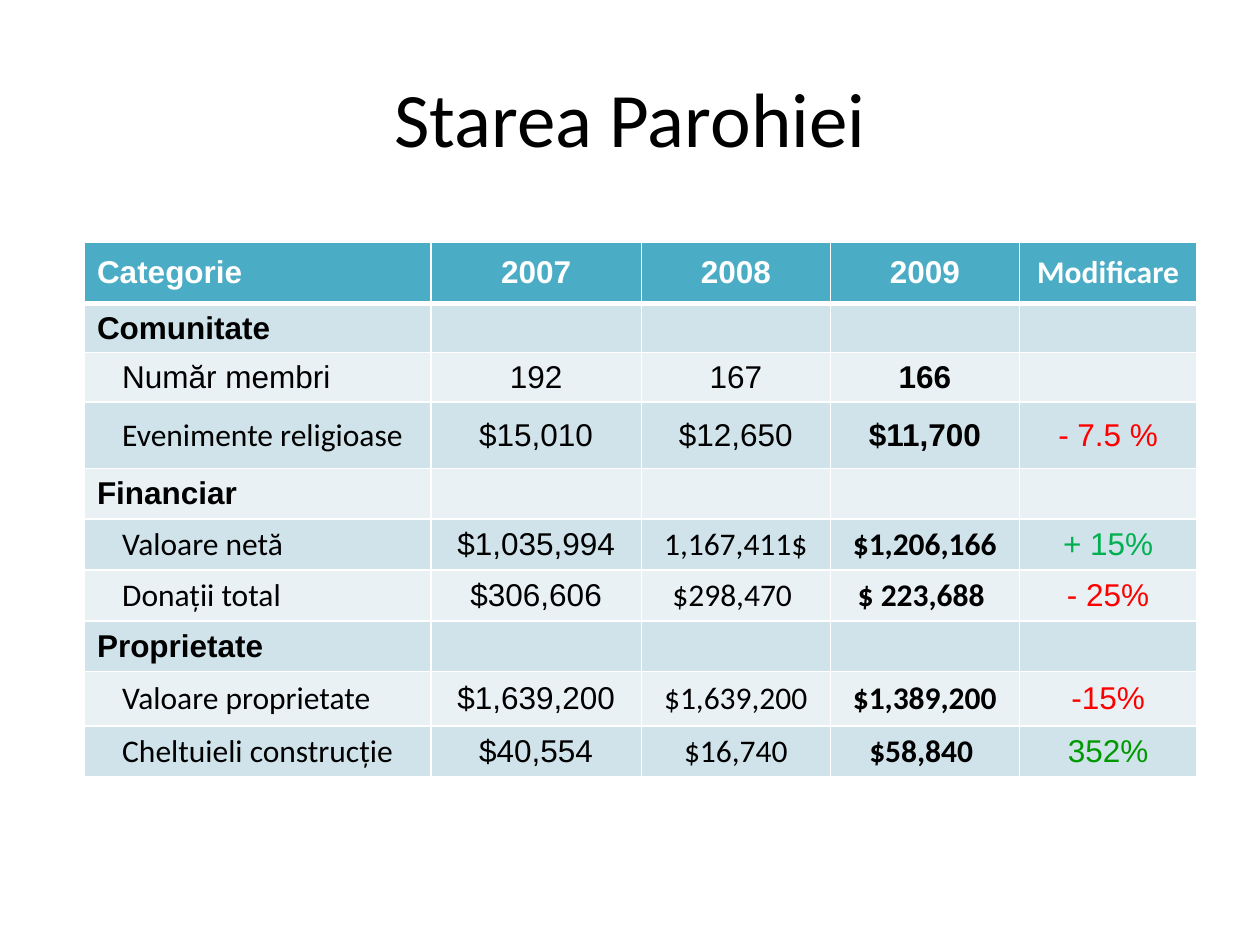
import dataclasses

import pptx
import pptx.dml.color
import pptx.enum.text
import pptx.oxml.ns
import pptx.util
from lxml import etree

Inches = pptx.util.Inches
Pt = pptx.util.Pt
ALIGN = pptx.enum.text.PP_ALIGN
MIDDLE = pptx.enum.text.MSO_ANCHOR.MIDDLE
qn = pptx.oxml.ns.qn


@dataclasses.dataclass(frozen=True)
class Theme:
    title_size: int = 44
    table_size: int = 18
    table_font: str = "Arial"
    text_font: str = "Calibri"
    ink: str = "000000"
    white: str = "FFFFFF"
    header: str = "4BACC6"
    bands: tuple = ("E9F1F5", "D0E3EA")
    loss: str = "FF0000"
    gain: str = "00B050"
    strong_gain: str = "009900"


THEME = Theme()
WIDTH, HEIGHT = 10, 7.5
COLUMNS = (2.75, 1.67, 1.5, 1.5, 1.41)
ROW_HEIGHTS = (0.49, 0.39, 0.39, 0.53, 0.4, 0.4, 0.4, 0.4, 0.43, 0.4)
ROWS = (
    ("Categorie", "2007", "2008", "2009", "Modificare"),
    ("Comunitate",),
    ("Număr membri", "192", "167", "166", ""),
    ("Evenimente religioase", "$15,010", "$12,650", "$11,700", "- 7.5 %"),
    ("Financiar",),
    ("Valoare netă", "$1,035,994", "1,167,411$", "$1,206,166", "+ 15%"),
    ("Donații total", "$306,606", "$298,470 ", "$ 223,688 ", "- 25%"),
    ("Proprietate",),
    ("Valoare proprietate", "$1,639,200", "$1,639,200", "$1,389,200", "-15%"),
    ("Cheltuieli construcție", "$40,554", "$16,740", "$58,840 ", "352%"),
)
CHANGE_COLOURS = {3: THEME.loss, 5: THEME.gain, 6: THEME.loss,
                  8: THEME.loss, 9: THEME.strong_gain}
CALIBRI_CELLS = ({(0, 4), (3, 0)}
                 | {(row, column) for row in (5, 6, 8, 9) for column in (0, 2, 3)})
TIGHT_CELLS = {(row, column) for row in (5, 6) for column in (2, 3)}


def rgb(value):
    return pptx.dml.color.RGBColor.from_string(value)


def add_span(para, text, font, size, colour, bold=False):
    span = para.add_run()
    span.text = text
    span.font.name = font
    span.font.size = Pt(size)
    span.font.bold = bold
    span.font.color.rgb = rgb(colour)


def add_title(page, text):
    box = page.shapes.title
    box.left, box.top = Inches(0.05 * WIDTH), Inches(0.04 * HEIGHT)
    box.width, box.height = Inches(0.9 * WIDTH), Inches(HEIGHT / 6)
    box.text_frame.vertical_anchor = MIDDLE
    para = box.text_frame.paragraphs[0]
    para.alignment = ALIGN.CENTER
    add_span(para, text, THEME.text_font, THEME.title_size, THEME.ink)


def set_borders(cell, widths):
    """Draw white borders; widths maps the sides L, R, T, B to points."""
    properties = cell._tc.get_or_add_tcPr()
    for position, (side, width) in enumerate(widths.items()):
        line = etree.Element(qn(f"a:ln{side}"), w=str(Pt(width)))
        fill = etree.SubElement(line, qn("a:solidFill"))
        etree.SubElement(fill, qn("a:srgbClr"), val=THEME.white)
        properties.insert(position, line)


def set_empty_font(para):
    """Size an empty cell's line, so that it does not stretch the row."""
    mark = etree.SubElement(para._p, qn("a:endParaRPr"), sz=str(THEME.table_size * 100))
    etree.SubElement(mark, qn("a:latin"), typeface=THEME.table_font)


def cell_colour(row, column):
    if row == 0:
        return THEME.white
    return CHANGE_COLOURS.get(row, THEME.ink) if column == 4 else THEME.ink


def fill_cell(cell, row, column, text, is_section):
    cell.fill.solid()
    cell.fill.fore_color.rgb = rgb(THEME.bands[row % 2] if row else THEME.header)
    cell.vertical_anchor = MIDDLE
    set_borders(cell, {"L": 1, "R": 1, "T": 3 if row == 1 else 1, "B": 1 if row else 3})
    if (row, column) in TIGHT_CELLS:
        cell.margin_left = cell.margin_right = cell.margin_top = cell.margin_bottom = 0
    para = cell.text_frame.paragraphs[0]
    if not text:
        set_empty_font(para)
        return
    if column:
        para.alignment = ALIGN.CENTER
    elif row and not is_section:
        para.level = 1
        properties = para._p.get_or_add_pPr()
        properties.set("marL", str(Inches(0.2)))
        properties.set("indent", "0")
    font = THEME.text_font if (row, column) in CALIBRI_CELLS else THEME.table_font
    bold = row == 0 or is_section or column == 3
    add_span(para, text, font, THEME.table_size, cell_colour(row, column), bold)


def add_status_table(page):
    frame = page.shapes.add_table(
        len(ROWS), len(COLUMNS), Inches(0.67), Inches(1.92),
        Inches(sum(COLUMNS)), Inches(sum(ROW_HEIGHTS)))
    table = frame.table
    for column, width in zip(table.columns, COLUMNS):
        column.width = Inches(width)
    for row, (height, texts) in enumerate(zip(ROW_HEIGHTS, ROWS)):
        table.rows[row].height = Inches(height)
        for column in range(len(COLUMNS)):
            text = texts[column] if column < len(texts) else ""
            fill_cell(table.cell(row, column), row, column, text, len(texts) == 1)


def main():
    deck = pptx.Presentation()
    deck.slide_width, deck.slide_height = Inches(WIDTH), Inches(HEIGHT)
    page = deck.slides.add_slide(deck.slide_layouts.get_by_name("Title Only"))
    add_title(page, "Starea Parohiei")
    add_status_table(page)
    deck.save("out.pptx")


if __name__ == "__main__":
    main()
